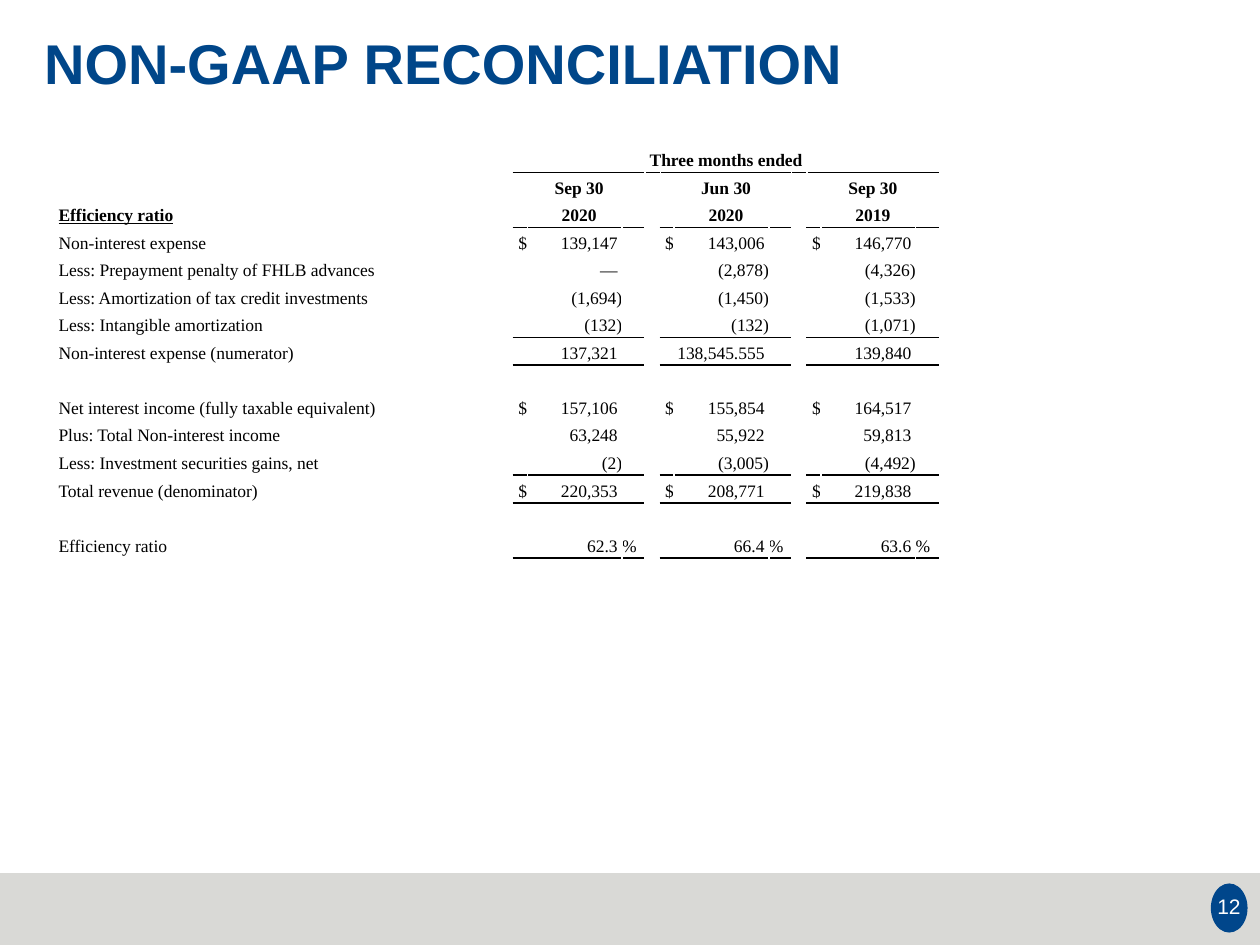
"""Build the efficiency ratio slide with its table of three quarters."""
from dataclasses import dataclass
from typing import Any

from lxml import etree
from pptx import Presentation
from pptx import util as u
from pptx.dml import color
from pptx.enum import shapes, text
from pptx.oxml import ns

NAVY, GREY, WHITE, BLACK = "004689", "D9D9D6", "FFFFFF", "000000"
LEFT, MID, RIGHT = text.PP_ALIGN.LEFT, text.PP_ALIGN.CENTER, text.PP_ALIGN.RIGHT
GROUP = [0.28, 1.91, 0.46]
GAP = 0.31
WIDTHS = [8.86, 0.41] + (GROUP + [GAP]) * 2 + GROUP
STARTS = [2, 6, 10]
HIGH = 8.33


@dataclass
class Line:
    label: str = ""
    vals: tuple[str, ...] = ("", "", "")
    kind: str = "plain"
    rule: bool = False


LINES = [
    Line(vals=("Three months ended",), kind="span", rule=True),
    Line(vals=("Sep 30", "Jun 30", "Sep 30"), kind="head"),
    Line("Efficiency ratio", ("2020", "2020", "2019"), "head", True),
    Line("Non-interest expense", ("139,147", "143,006", "146,770"), "money"),
    Line("Less: Prepayment penalty of FHLB advances", ("—", "(2,878)", "(4,326)")),
    Line("Less: Amortization of tax credit investments", ("(1,694)", "(1,450)", "(1,533)")),
    Line("Less: Intangible amortization", ("(132)", "(132)", "(1,071)"), rule=True),
    Line("Non-interest expense (numerator)", ("137,321", "138,545.555", "139,840"), rule=True),
    Line(kind="head"),
    Line("Net interest income (fully taxable equivalent)", ("157,106", "155,854", "164,517"), "money"),
    Line("Plus: Total Non-interest income", ("63,248", "55,922", "59,813")),
    Line("Less: Investment securities gains, net", ("(2)", "(3,005)", "(4,492)"), rule=True),
    Line("Total revenue (denominator)", ("220,353", "208,771", "219,838"), "money", True),
    Line(kind="head"),
    Line("Efficiency ratio", ("62.3", "66.4", "63.6"), "ratio", True),
]


def rgb(code: str) -> color.RGBColor:
    return color.RGBColor.from_string(code)


def add_run(para: Any, words: str, size: float, face: str, ink: str, bold: bool = False) -> Any:
    run = para.add_run()
    run.text = words
    font = run.font
    font.size, font.name, font.bold = u.Pt(size), face, bold
    font.color.rgb = rgb(ink)
    return run


def add_shape(slide: Any, form: Any, box: tuple[float, ...], fill: str) -> None:
    shape = slide.shapes.add_shape(form, *map(u.Cm, box))
    shape.shadow.inherit = False
    shape.fill.solid()
    shape.fill.fore_color.rgb = rgb(fill)
    shape.line.fill.background()


def set_frame(frame: Any, anchor: Any) -> None:
    frame.word_wrap = True
    frame.auto_size = text.MSO_AUTO_SIZE.NONE
    frame.vertical_anchor = anchor
    frame.margin_left = frame.margin_right = u.Cm(0.25)
    frame.margin_top = frame.margin_bottom = u.Cm(0.25)


def set_edges(cell: Any, top: str, base: str) -> None:
    cell.fill.background()
    props = cell._tc.get_or_add_tcPr()
    edges = {"lnL": WHITE, "lnR": WHITE, "lnT": top, "lnB": base}
    for spot, (tag, ink) in enumerate(edges.items()):
        line = etree.Element(ns.qn(f"a:{tag}"), w=str(u.Pt(1)))
        fill = etree.SubElement(line, ns.qn("a:solidFill"))
        etree.SubElement(fill, ns.qn("a:srgbClr"), val=ink)
        props.insert(spot, line)


def fill_cell(cell: Any, words: str, align: Any = LEFT, bold: bool = False,
              left: float = 0.1, right: float = 0) -> Any:
    cell.margin_left, cell.margin_right = u.Cm(left), u.Cm(right)
    para = cell.text_frame.paragraphs[0]
    para.alignment = align
    return add_run(para, words, 10, "Times New Roman", BLACK, bold)


def is_ruled(row: int, col: int) -> bool:
    if row < 0 or not LINES[row].rule:
        return False
    return col >= 2 and (LINES[row].kind == "span" or (col - 2) % 4 < 3)


def fill_value(table: Any, row: int, col: int, kind: str, words: str) -> None:
    cell = table.cell(row, col)
    if kind in ("head", "span"):
        cell.merge(table.cell(row, 12 if kind == "span" else col + 2))
        if words:
            fill_cell(cell, words, MID, True, right=0.1)
        return
    if kind == "money":
        fill_cell(cell, "$")
        cell = table.cell(row, col + 1)
    else:
        cell.merge(table.cell(row, col + 1))
    fill_cell(cell, words, RIGHT, left=0, right=0 if words.endswith(")") else 0.09)
    if kind == "ratio":
        fill_cell(table.cell(row, col + 2), "%", left=0)


def add_table(slide: Any) -> None:
    frame = slide.shapes.add_table(
        len(LINES), len(WIDTHS), u.Cm(1.08), u.Cm(2.92), u.Cm(sum(WIDTHS)), u.Cm(HIGH))
    table = frame.table
    table.first_row = table.horz_banding = False
    for col, width in zip(table.columns, WIDTHS):
        col.width = u.Cm(width)
    for row, line in enumerate(LINES):
        table.rows[row].height = u.Cm(HIGH / len(LINES))
        for col in range(len(WIDTHS)):
            cell = table.cell(row, col)
            cell.vertical_anchor = text.MSO_ANCHOR.BOTTOM
            cell.margin_top, cell.margin_bottom = 0, u.Cm(0.05)
            cell.margin_left = cell.margin_right = 0
            para = cell.text_frame.paragraphs[0]
            para.line_spacing = 0.83
            para._p.get_or_add_endParaRPr().set("sz", "1000")
            set_edges(cell, *(BLACK if is_ruled(r, col) else WHITE for r in (row - 1, row)))
        if line.label:
            head = line.kind == "head"
            table.cell(row, 0).merge(table.cell(row, 1))
            run = fill_cell(table.cell(row, 0), line.label, bold=head, right=0.1)
            run.font.underline = head
        for col, words in zip(STARTS, line.vals):
            fill_value(table, row, col, line.kind, words)


def main() -> None:
    deck = Presentation()
    deck.slide_width, deck.slide_height = u.Cm(25.4), u.Cm(19.05)
    slide = deck.slides.add_slide(deck.slide_layouts[5])
    add_shape(slide, shapes.MSO_SHAPE.RECTANGLE, (0, 17.6, 25.4, 1.45), GREY)
    add_shape(slide, shapes.MSO_SHAPE.OVAL, (24.41, 17.81, 0.74, 0.99), "00468B")

    title = slide.shapes.title
    title.left, title.top, title.width, title.height = map(u.Cm, (0.64, 0.48, 24.56, 2.9))
    set_frame(title.text_frame, text.MSO_ANCHOR.TOP)
    para = title.text_frame.paragraphs[0]
    para.alignment, para.line_spacing = LEFT, 0.9
    add_run(para, "NON-GAAP RECONCILIATION", 32, "Arial", NAVY, True)

    page = slide.shapes.add_textbox(*map(u.Cm, (24.18, 17.78, 1.19, 0.99)))
    set_frame(page.text_frame, text.MSO_ANCHOR.MIDDLE)
    para = page.text_frame.paragraphs[0]
    para.alignment = MID
    add_run(para, "12", 12, "Arial", WHITE)

    add_table(slide)
    deck.save("out.pptx")


if __name__ == "__main__":
    main()
